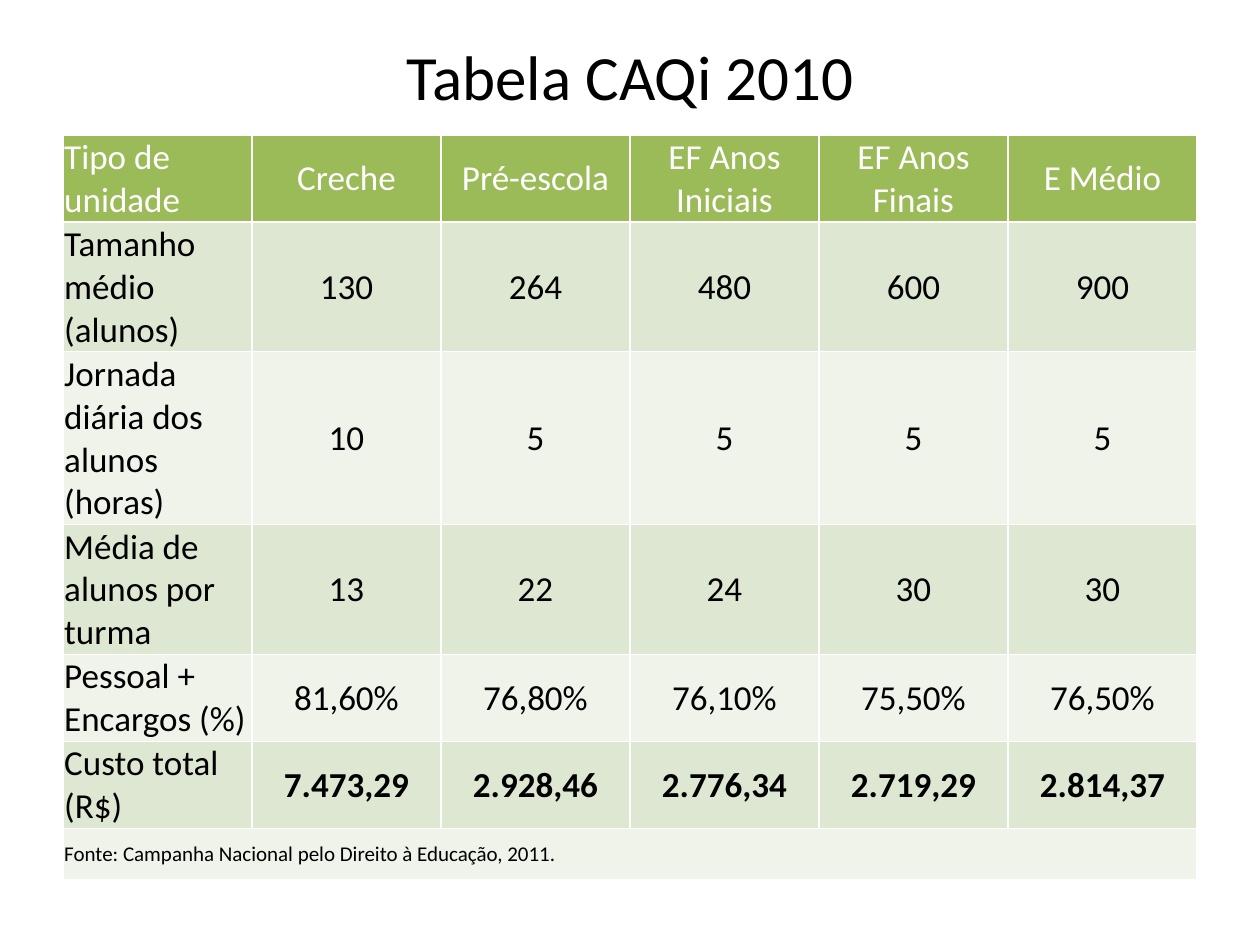
from pptx import Presentation
from pptx.dml.color import RGBColor
from pptx.enum.text import MSO_ANCHOR as Anchor, PP_ALIGN as Align
from pptx.util import Inches, Pt

TITLE = "Tabela CAQi 2010"
HEAD = ("Tipo de unidade", "Creche", "Pré-escola", "EF Anos Iniciais",
        "EF Anos Finais", "E Médio")
BODY = [
    ("Tamanho médio (alunos)", "130", "264", "480", "600", "900"),
    ("Jornada diária dos alunos (horas)", "10", "5", "5", "5", "5"),
    ("Média de alunos por turma", "13", "22", "24", "30", "30"),
    ("Pessoal + Encargos (%)", "81,60%", "76,80%", "76,10%", "75,50%", "76,50%"),
    ("Custo total (R$)", "7.473,29", "2.928,46", "2.776,34", "2.719,29", "2.814,37"),
]
SOURCE = "Fonte: Campanha Nacional pelo Direito à Educação, 2011."
ROWS = [HEAD, *BODY, (SOURCE,)]
LINES = (2, 3, 4, 3, 2, 2, 1.22)  # text lines that each row holds
LINE = 0.335
GREEN, BANDS = "9BBB59", ("EFF3EA", "DEE7D1")
BLACK, WHITE = "000000", "FFFFFF"

WIDTH, HEIGHT = 10, 7.5
SIDE = WIDTH / 20
WIDE = WIDTH - 2 * SIDE


def color(code):
    return RGBColor.from_string(code)


def style(frame, size, code, align, bold=False):
    para = frame.paragraphs[0]
    para.alignment = align
    for run in para.runs:
        font = run.font
        font.name, font.size, font.bold = "Calibri", Pt(size), bold
        font.color.rgb = color(code)


def add_title(slide):
    title = slide.shapes.title
    title.left, title.top = Inches(SIDE), Inches(-0.03)
    title.width, title.height = Inches(WIDE), Inches(1.25)
    frame = title.text_frame
    frame.text = TITLE
    frame.vertical_anchor = Anchor.MIDDLE
    style(frame, 36, BLACK, Align.CENTER)


def add_table(slide):
    table = slide.shapes.add_table(
        len(ROWS), len(HEAD), Inches(SIDE), Inches(1.07),
        Inches(WIDE), Inches(sum(LINES) * LINE)).table
    for col in table.columns:
        col.width = Inches(WIDE / len(HEAD))
    last = len(ROWS) - 1
    table.cell(last, 0).merge(table.cell(last, len(HEAD) - 1))
    for r, (texts, lines) in enumerate(zip(ROWS, LINES)):
        table.rows[r].height = Inches(lines * LINE)
        for c, text in enumerate(texts):
            cell = table.cell(r, c)
            cell.fill.solid()
            cell.fill.fore_color.rgb = color(BANDS[r % 2] if r else GREEN)
            cell.vertical_anchor = Anchor.MIDDLE
            cell.margin_left = cell.margin_right = cell.margin_top = Inches(0.01)
            cell.margin_bottom = 0
            cell.text_frame.text = text
            style(cell.text_frame, 12 if r == last else 20,
                  BLACK if r else WHITE, Align.CENTER if c else Align.LEFT,
                  bold=r == last - 1 and c > 0)


def main():
    deck = Presentation()
    deck.slide_width, deck.slide_height = Inches(WIDTH), Inches(HEIGHT)
    slide = deck.slides.add_slide(deck.slide_layouts[5])
    add_title(slide)
    add_table(slide)
    deck.save("out.pptx")


if __name__ == "__main__":
    main()
